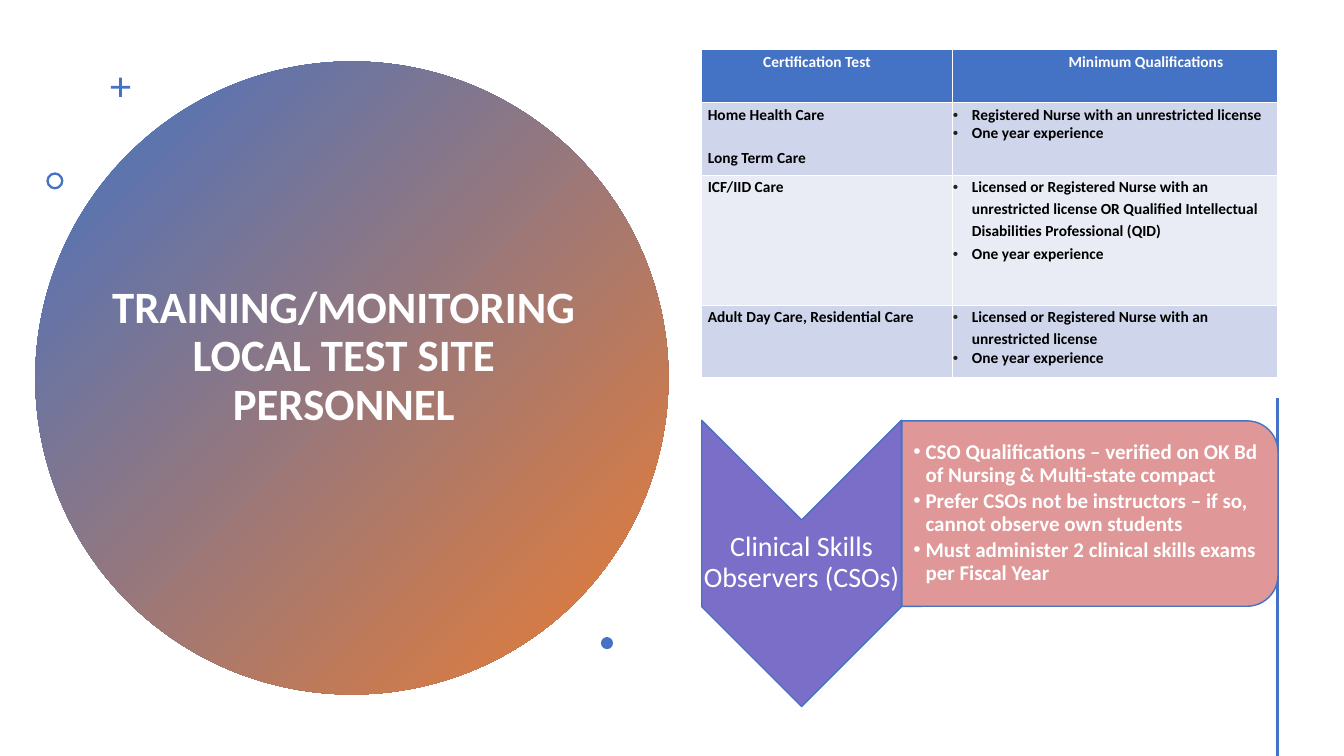
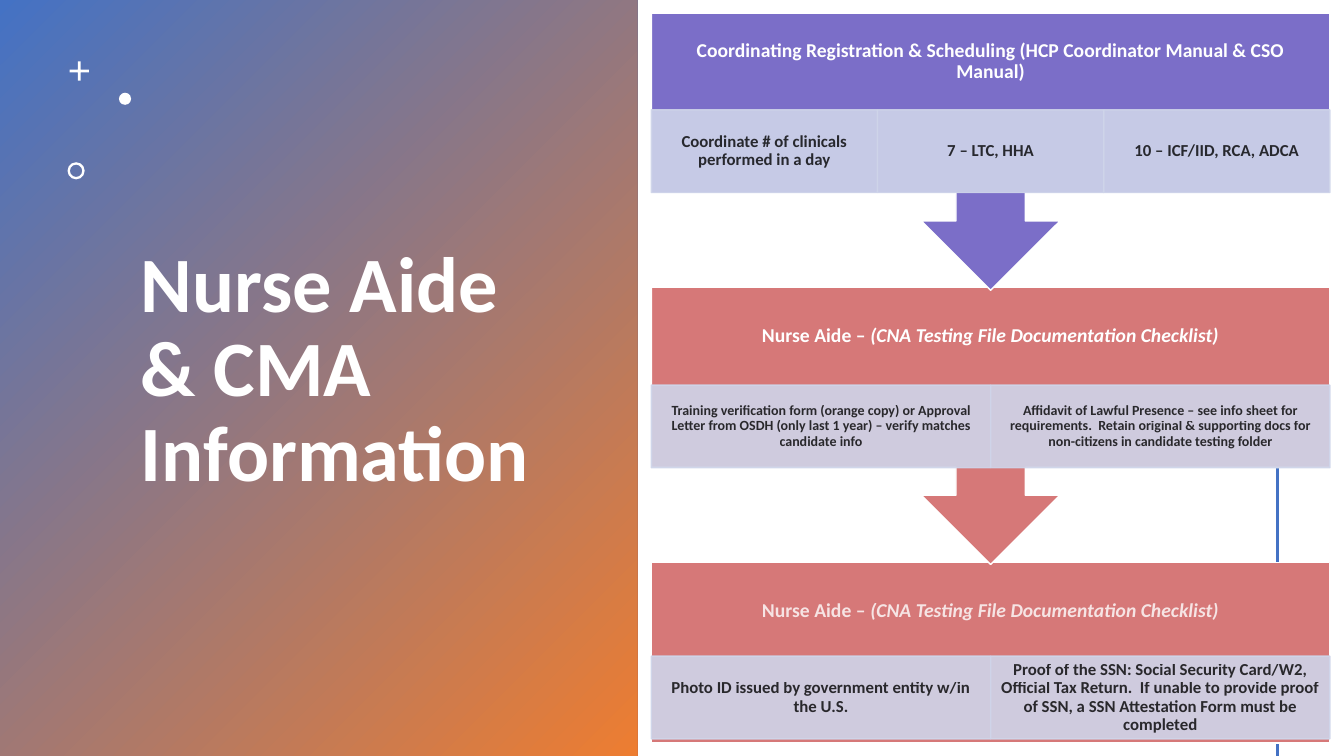
from dataclasses import dataclass
from typing import NamedTuple

import lxml.etree
import pptx
import pptx.dml.color
import pptx.enum.dml
import pptx.enum.shapes
import pptx.enum.text
import pptx.oxml.ns
import pptx.util

Inches = pptx.util.Inches
Pt = pptx.util.Pt
RGBColor = pptx.dml.color.RGBColor
Shape = pptx.enum.shapes.MSO_SHAPE
Align = pptx.enum.text.PP_ALIGN
Anchor = pptx.enum.text.MSO_ANCHOR
qn = pptx.oxml.ns.qn

BLUE = RGBColor(0x44, 0x72, 0xC4)
ORANGE = RGBColor(0xED, 0x7D, 0x31)
PURPLE = RGBColor(0x7B, 0x6E, 0xC8)
RED = RGBColor(0xD6, 0x78, 0x78)
PINK = RGBColor(0xDF, 0x97, 0x97)
PALE = RGBColor(0xCF, 0xD5, 0xEA)
MIST = RGBColor(0xE9, 0xEB, 0xF5)
INK = RGBColor(0x23, 0x1F, 0x20)
WHITE = RGBColor(255, 255, 255)
BLACK = RGBColor(0, 0, 0)
FONT = "Calibri"


class Box(NamedTuple):
    left: float
    top: float
    width: float
    height: float

    def lengths(self) -> list:
        return [Inches(side) for side in self]


class Run(NamedTuple):
    text: str
    slant: bool = False


class Look(NamedTuple):
    size: float
    tone: RGBColor = WHITE
    bold: bool = True
    align: Align = Align.LEFT
    lead: object = 0.9


class Mark(NamedTuple):
    kind: Shape
    left: float
    top: float
    size: float
    adjust: float | None = None


@dataclass
class Stage:
    top: float
    band: float
    kind: Shape
    height: float
    tone: RGBColor
    title: list[Run]
    cells: list[str]
    size: float = 12
    faded: bool = False


def fade(node, percent: int) -> None:
    """Make every colour below the node partly transparent."""
    for tone in node.iter(qn("a:srgbClr")):
        lxml.etree.SubElement(tone, qn("a:alpha"), val=str(percent * 1000))


def put(par, runs: list[Run], look: Look) -> None:
    par.alignment = look.align
    par.line_spacing = look.lead
    for item in runs:
        run = par.add_run()
        run.text = item.text
        font = run.font
        font.name, font.size = FONT, Pt(look.size)
        font.bold, font.italic = look.bold, item.slant
        font.color.rgb = look.tone


def indent(par, left: float, hang: float = 0, tone: RGBColor | None = None) -> None:
    """Indent a paragraph, with a bullet when a bullet colour is given."""
    props = par._p.get_or_add_pPr()
    props.set("marL", str(Inches(left)))
    props.set("indent", str(-Inches(hang)))
    if tone is not None:
        mark = lxml.etree.SubElement(props, qn("a:buClr"))
        lxml.etree.SubElement(mark, qn("a:srgbClr"), val=str(tone))
        lxml.etree.SubElement(props, qn("a:buFont"), typeface="Arial")
        lxml.etree.SubElement(props, qn("a:buChar"), char="•")


def frame(shape, side: float = 0.1, edge: float = 0.05):
    """Prepare the text frame of a shape and hand it back."""
    text = shape.text_frame
    text.word_wrap = True
    text.vertical_anchor = Anchor.MIDDLE
    text.margin_left = text.margin_right = Inches(side)
    text.margin_top = text.margin_bottom = Inches(edge)
    return text


def label(slide, box: Box, side: float = 0.1, edge: float = 0.05):
    return frame(slide.shapes.add_textbox(*box.lengths()), side, edge)


def form(slide, kind: Shape, box: Box, tone: RGBColor | None = None,
         line: RGBColor | None = None, turn: float = 0):
    """Draw a preset shape; without a tone it gets the gradient."""
    shape = slide.shapes.add_shape(kind, *box.lengths())
    shape.shadow.inherit = False
    shape.rotation = turn
    if tone is None:
        shape.fill.gradient()
        shape.fill.gradient_angle = 315
        for stop, shade, place in zip(shape.fill.gradient_stops, (BLUE, ORANGE), (0, 1)):
            stop.color.rgb, stop.position = shade, place
    else:
        shape.fill.solid()
        shape.fill.fore_color.rgb = tone
    if line is None:
        shape.line.fill.background()
    else:
        shape.line.color.rgb = line
        shape.line.width = Pt(1)
    return shape


def scatter(slide, marks: list[Mark], tone: RGBColor) -> None:
    for mark in marks:
        box = Box(mark.left, mark.top, mark.size, mark.size)
        shape = form(slide, mark.kind, box, tone)
        if mark.adjust is not None:
            shape.adjustments[0] = mark.adjust


def plus(left: float, top: float) -> Mark:
    return Mark(Shape.CROSS, left, top, 0.19, 0.43)


def ring(left: float, top: float) -> Mark:
    return Mark(Shape.DONUT, left, top, 0.17, 0.14)


def dot(left: float, top: float) -> Mark:
    return Mark(Shape.OVAL, left, top, 0.12)


def rule(slide) -> None:
    """Draw the upright line near the right edge."""
    ends = [Inches(n) for n in (12.67, 3.95, 12.67, 7.5)]
    line = slide.shapes.add_connector(pptx.enum.shapes.MSO_CONNECTOR.STRAIGHT, *ends)
    line.line.color.rgb = BLUE
    line.line.width = Pt(2)
    lxml.etree.SubElement(line.element.spPr, qn("a:effectLst"))


HEADS = [("Certification Test", 0.61), ("Minimum Qualifications", 1.15)]
YEAR = "One year experience"
TIGHT = Pt(12.7)
# Tests, qualifications, leading of the last qualification
ROWS = [
    (["Home Health Care", "Long Term Care"],
     ["Registered Nurse with an unrestricted license", YEAR], TIGHT),
    (["ICF/IID Care"],
     ["Licensed or Registered Nurse with an unrestricted license OR Qualified "
      "Intellectual Disabilities Professional (QID)", YEAR], 1.15),
    (["Adult Day Care, Residential Care"],
     ["Licensed or Registered Nurse with an unrestricted license", YEAR], TIGHT),
]
DUTIES = [
    "CSO Qualifications – verified on OK Bd of Nursing & Multi-state compact",
    "Prefer CSOs not be instructors – if so, cannot observe own students",
    "Must administer 2 clinical skills exams per Fiscal Year",
]


def pars(text, count: int) -> list:
    """Give a text frame the wanted number of paragraphs."""
    return [text.paragraphs[0]] + [text.add_paragraph() for _ in range(count - 1)]


def clear(cell, tone: RGBColor):
    """Fill a cell, drop its margins and hand back its text frame."""
    cell.fill.solid()
    cell.fill.fore_color.rgb = tone
    cell.margin_left = cell.margin_right = cell.margin_top = cell.margin_bottom = 0
    return cell.text_frame


def grid(slide) -> None:
    """Draw the table of tests and qualifications."""
    box = Box(6.96, 0.49, 5.71, 3.26)
    table = slide.shapes.add_table(len(ROWS) + 1, 2, *box.lengths()).table
    for col, width in zip(table.columns, (2.49, 3.22)):
        col.width = Inches(width)
    for row, height in zip(table.rows, (0.53, 0.72, 1.29, 0.72)):
        row.height = Inches(height)
    for col, (head, left) in enumerate(HEADS):
        par = clear(table.cell(0, col), BLUE).paragraphs[0]
        indent(par, left)
        put(par, [Run(head)], Look(11, lead=1.15))
    for row, (tests, needs, lead) in enumerate(ROWS, 1):
        tone = PALE if row % 2 else MIST
        text = clear(table.cell(row, 0), tone)
        for num, (par, test) in enumerate(zip(pars(text, len(tests)), tests)):
            indent(par, 0.06)
            par.space_before = Pt(5 if num else 0)
            par.space_after = Pt(10)
            put(par, [Run(test)], Look(11, BLACK, lead=1.15))
        text = clear(table.cell(row, 1), tone)
        for num, (par, need) in enumerate(zip(pars(text, len(needs)), needs)):
            indent(par, 0.19, 0.19, INK)
            par.space_before = Pt(0.5 if num else 0)
            put(par, [Run(need)], Look(11, BLACK, lead=lead if num else 1.15))


def staff(slide) -> None:
    """Build the slide on test site personnel."""
    form(slide, Shape.OVAL, Box(0.35, 0.61, 6.28, 6.28))
    scatter(slide, [plus(1.1, 0.77), ring(0.46, 1.71), dot(5.96, 6.32)], BLUE)
    rule(slide)
    grid(slide)
    title = label(slide, Box(0.77, 1.01, 5.28, 5.07))
    put(title.paragraphs[0], [Run("TRAINING/MONITORING LOCAL TEST SITE PERSONNEL")],
        Look(32, align=Align.CENTER))
    form(slide, Shape.CHEVRON, Box(6.53, 4.6, 2.84, 1.98), PURPLE, BLUE, 90)
    role = label(slide, Box(6.96, 5.16, 1.98, 0.85), 0.01, 0.01)
    put(role.paragraphs[0], [Run("Clinical Skills Observers (CSOs)")],
        Look(20, bold=False, align=Align.CENTER))
    form(slide, Shape.ROUND_2_SAME_RECTANGLE, Box(9.89, 3.23, 1.84, 3.73), PINK, BLUE, 90)
    text = label(slide, Box(8.94, 4.26, 3.64, 1.66), 0.01, 0.01)
    text.margin_left = Inches(0.12)
    for par, duty in zip(pars(text, len(DUTIES)), DUTIES):
        indent(par, 0.12, 0.12, WHITE)
        par.space_after = Pt(2.5)
        put(par, [Run(duty)], Look(15))


CHECK = [Run("Nurse Aide – "), Run("(CNA Testing File Documentation Checklist)", True)]
STAGES = [
    Stage(5.58, 0.93, Shape.RECTANGLE, 1.79, RED, CHECK, [
        "Photo ID issued by government entity w/in the U.S.",
        "Proof of the SSN: Social Security Card/W2, Official Tax Return.  If unable to "
        "provide proof of SSN, a SSN Attestation Form must be completed"], faded=True),
    Stage(2.85, 0.97, Shape.UP_ARROW_CALLOUT, 2.75, RED, CHECK, [
        "Training verification form (orange copy) or Approval Letter from OSDH "
        "(only last 1 year) – verify matches candidate info",
        "Affidavit of Lawful Presence – see info sheet for requirements.  Retain original "
        "& supporting docs for non-citizens in candidate testing folder"], size=10),
    Stage(0.13, 0.96, Shape.UP_ARROW_CALLOUT, 2.75, PURPLE, [
        Run("Coordinating Registration & Scheduling (HCP Coordinator Manual & CSO Manual)")],
        ["Coordinate # of clinicals performed in a day", "7 – LTC, HHA",
         "10 – ICF/IID, RCA, ADCA"]),
]


def step(slide, stage: Stage) -> None:
    """Draw one stage: its callout, its title and its row of cells."""
    left, width = 6.46, 6.73
    turn = 0 if stage.kind == Shape.RECTANGLE else 180
    form(slide, stage.kind, Box(left, stage.top, width, stage.height),
         stage.tone, WHITE, turn)
    title = label(slide, Box(left, stage.top, width, 0.97), 0.11, 0.11)
    put(title.paragraphs[0], stage.title, Look(14, align=Align.CENTER))
    if stage.faded:
        fade(title._txBody, 80)
    wide = width / len(stage.cells)
    for num, words in enumerate(stage.cells):
        box = Box(left + num * wide, stage.top + stage.band, wide, 0.82)
        cell = form(slide, Shape.RECTANGLE, box, PALE, PALE)
        fade(cell.element.spPr, 90)
        text = frame(cell, 0.09, 0.02)
        put(text.paragraphs[0], [Run(words)], Look(stage.size, BLACK, align=Align.CENTER))
        fade(cell.element.txBody, 80)


def aide(slide) -> None:
    """Build the slide on nurse aide information."""
    form(slide, Shape.RECTANGLE, Box(0, 0, 6.32, 7.5))
    par = label(slide, Box(1.3, 0.42, 4.38, 6.53)).paragraphs[0]
    put(par, [Run("Nurse Aide")], Look(56))
    par.add_line_break()
    put(par, [Run("& CMA Information")], Look(56))
    scatter(slide, [plus(0.69, 0.61), dot(1.18, 0.92), ring(0.67, 1.61)], WHITE)
    rule(slide)
    for stage in STAGES:
        step(slide, stage)


def main() -> None:
    deck = pptx.Presentation()
    deck.slide_width, deck.slide_height = Inches(13.33), Inches(7.5)
    for build in (staff, aide):
        build(deck.slides.add_slide(deck.slide_layouts[6]))
    deck.save("out.pptx")


if __name__ == "__main__":
    main()
